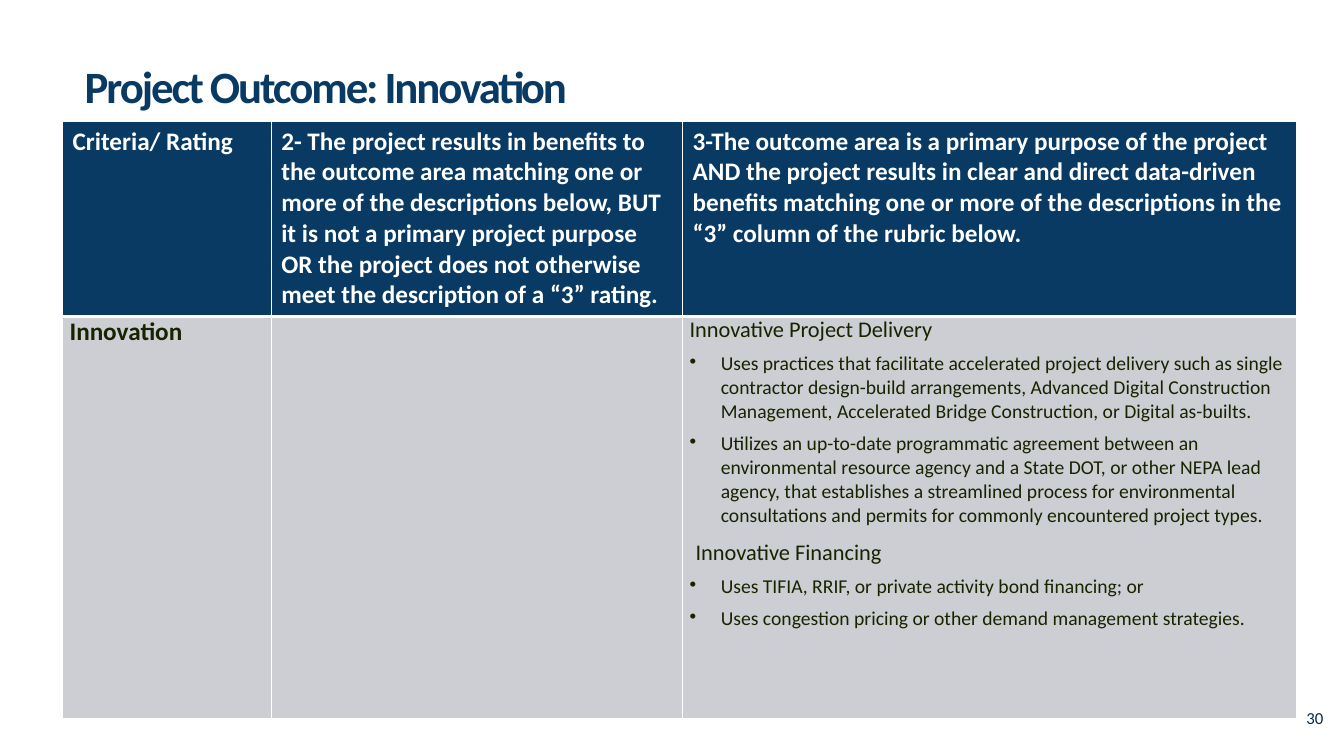
from dataclasses import dataclass

import lxml.etree
import pptx
import pptx.dml.color
import pptx.enum.text
import pptx.oxml.ns
import pptx.util

RGBColor = pptx.dml.color.RGBColor
NAVY = RGBColor(0x08, 0x3A, 0x64)
DEEP = RGBColor(0x06, 0x2B, 0x4B)
WHITE = RGBColor(0xFF, 0xFF, 0xFF)
GRAY = RGBColor(0xCC, 0xCE, 0xD3)
INK = RGBColor(0x18, 0x23, 0x00)

FACE = "Calibri"
SCALE = 9144
COLS = (207, 408, 609)
ROWS = (194, 399)


@dataclass(frozen=True)
class Para:
    text: str
    size: int
    color: RGBColor
    bold: bool = False
    bullet: bool = False
    indent: int = 0
    before: int = 0
    after: int = 0
    lead: float = 1.0
    track: int = 0


@dataclass(frozen=True)
class Box:
    left: int
    top: int
    width: int
    height: int
    para: Para
    pad: tuple[int, int] = (10, 5)
    anchor: pptx.enum.text.MSO_ANCHOR = pptx.enum.text.MSO_ANCHOR.TOP


@dataclass(frozen=True)
class Band:
    fill: RGBColor
    pad: tuple[int, int]
    edges: dict[str, int]
    cells: tuple[tuple[Para, ...], ...]


def px(count: int) -> pptx.util.Emu:
    return pptx.util.Emu(count * SCALE)


def head(text: str) -> Para:
    return Para(text, 18, WHITE, bold=True)


def topic(text: str, indent: int = 0, before: int = 0) -> Para:
    return Para(text, 16, INK, indent=indent, before=before, after=6)


def point(text: str) -> Para:
    return Para(text, 14, INK, bullet=True, indent=31, after=6)


BOXES = (
    Box(84, 72, 988, 32,
        Para("Project Outcome: Innovation", 32, NAVY, bold=True, lead=0.9, track=-150),
        (0, 0), pptx.enum.text.MSO_ANCHOR.MIDDLE),
    Box(1286, 697, 47, 47, Para("30", 12, DEEP)),
)

BANDS = (
    Band(NAVY, (10, 5), {"lnL": 1, "lnR": 1, "lnT": 1, "lnB": 3}, (
        (head("Criteria/ Rating"),),
        (head("2- The project results in benefits to the outcome area matching one or "
              "more of the descriptions below, BUT it is not a primary project purpose "
              "OR the project does not otherwise meet the description of a “3” rating."),),
        (head("3-The outcome area is a primary purpose of the project AND the project "
              "results in clear and direct data-driven benefits matching one or more of "
              "the descriptions in the “3” column of the rubric below."),),
    )),
    Band(GRAY, (7, 0), {"lnL": 1, "lnR": 1, "lnT": 3, "lnB": 1}, (
        (Para("Innovation", 18, INK, bold=True),),
        (),
        (
            topic("Innovative Project Delivery"),
            point("Uses practices that facilitate accelerated project delivery such as "
                  "single contractor design-build arrangements, Advanced Digital "
                  "Construction Management, Accelerated Bridge Construction, or Digital "
                  "as-builts."),
            point("Utilizes an up-to-date programmatic agreement between an environmental "
                  "resource agency and a State DOT, or other NEPA lead agency, that "
                  "establishes a streamlined process for environmental consultations and "
                  "permits for commonly encountered project types."),
            topic("Innovative Financing", indent=6, before=2),
            point("Uses TIFIA, RRIF, or private activity bond financing; or"),
            point("Uses congestion pricing or other demand management strategies."),
        ),
    )),
)


def write(frame: pptx.text.text.TextFrame, paras: tuple[Para, ...]) -> None:
    for index, para in enumerate(paras):
        line = frame.paragraphs[0] if index == 0 else frame.add_paragraph()
        line.text = para.text
        props = line._p.get_or_add_pPr()
        if para.indent:
            props.set("marL", str(px(para.indent)))
        if para.bullet:
            props.set("indent", str(px(-para.indent)))
            mark = lxml.etree.SubElement(props, pptx.oxml.ns.qn("a:buChar"))
            mark.set("char", "•")
        line.line_spacing = para.lead
        line.space_before = pptx.util.Pt(para.before)
        line.space_after = pptx.util.Pt(para.after)
        font = line.font
        font.name = FACE
        font.size = pptx.util.Pt(para.size)
        font.bold = para.bold
        font.color.rgb = para.color
        if para.track:
            props.get_or_add_defRPr().set("spc", str(para.track))


def add_box(slide: pptx.slide.Slide, box: Box) -> None:
    shape = slide.shapes.add_textbox(px(box.left), px(box.top), px(box.width), px(box.height))
    frame = shape.text_frame
    frame.word_wrap = True
    frame.vertical_anchor = box.anchor
    frame.margin_left = frame.margin_right = px(box.pad[0])
    frame.margin_top = frame.margin_bottom = px(box.pad[1])
    write(frame, (box.para,))


def edge(cell: pptx.table._Cell, edges: dict[str, int]) -> None:
    props = cell._tc.get_or_add_tcPr()
    for index, (side, width) in enumerate(edges.items()):
        line = lxml.etree.Element(pptx.oxml.ns.qn(f"a:{side}"), w=str(pptx.util.Pt(width)))
        fill = lxml.etree.SubElement(line, pptx.oxml.ns.qn("a:solidFill"))
        lxml.etree.SubElement(fill, pptx.oxml.ns.qn("a:srgbClr"), val=str(WHITE))
        props.insert(index, line)


def add_grid(slide: pptx.slide.Slide) -> None:
    grid = slide.shapes.add_table(
        len(ROWS), len(COLS), px(62), px(120), px(sum(COLS)), px(sum(ROWS))).table
    for column, width in zip(grid.columns, COLS):
        column.width = px(width)
    for row, height, band in zip(grid.rows, ROWS, BANDS):
        row.height = px(height)
        for cell, paras in zip(row.cells, band.cells):
            cell.fill.solid()
            cell.fill.fore_color.rgb = band.fill
            cell.margin_left = cell.margin_right = px(band.pad[0])
            cell.margin_top = cell.margin_bottom = px(band.pad[1])
            edge(cell, band.edges)
            write(cell.text_frame, paras)


def main() -> None:
    deck = pptx.Presentation()
    deck.slide_width = px(1333)
    deck.slide_height = px(750)
    slide = deck.slides.add_slide(deck.slide_layouts[6])
    for box in BOXES:
        add_box(slide, box)
    add_grid(slide)
    deck.save("out.pptx")


if __name__ == "__main__":
    main()
